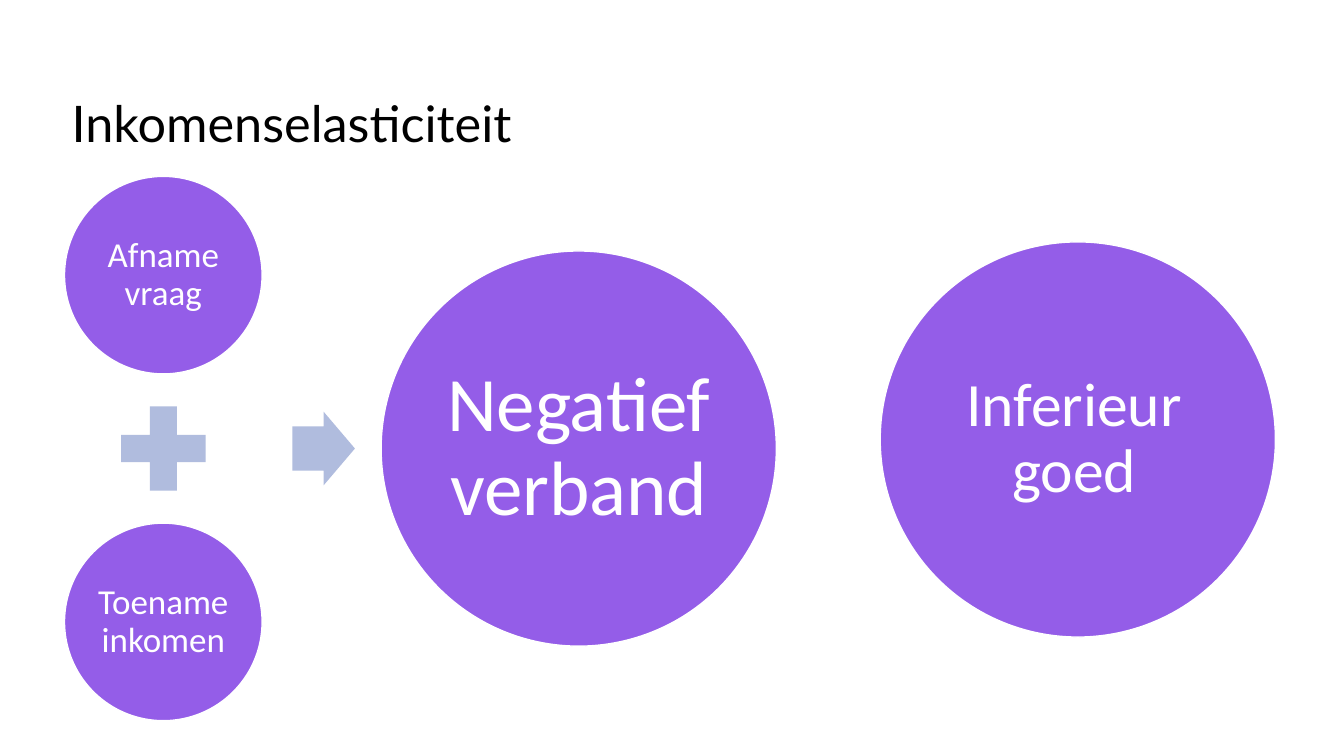
from dataclasses import dataclass

from pptx import Presentation
from pptx.dml.color import RGBColor
from pptx.enum.shapes import MSO_SHAPE as Shape
from pptx.enum.text import MSO_ANCHOR as Anchor, MSO_AUTO_SIZE as AutoSize, PP_ALIGN as Align
from pptx.util import Inches, Pt


@dataclass(frozen=True)
class Theme:
    purple: RGBColor = RGBColor(0x94, 0x5D, 0xE8)
    pale_blue: RGBColor = RGBColor(0xB0, 0xBC, 0xDE)
    white: RGBColor = RGBColor(0xFF, 0xFF, 0xFF)
    black: RGBColor = RGBColor(0, 0, 0)
    title_font: str = "Lato"
    body_font: str = "Calibri"
    title_size: int = 36
    small_size: int = 25
    goods_size: int = 44
    relation_size: int = 55


@dataclass(frozen=True)
class Circle:
    text: str
    x: float
    y: float
    diameter: float
    size: int
    inset: float
    extra_right: float = 0


@dataclass(frozen=True)
class Operator:
    kind: Shape
    x: float
    width: float
    height: float
    adjustments: tuple[float, ...] = ()


THEME = Theme()
MIDDLE = 4.45
COLUMN = 1.62
STEP = 1.72
SMALL, LARGE = 1.96, 3.92

CIRCLES = (
    Circle("Afname vraag", COLUMN, MIDDLE - STEP, SMALL, THEME.small_size, 0.03),
    Circle("Toename inkomen", COLUMN, MIDDLE + STEP, SMALL, THEME.small_size, 0.03),
    Circle("Negatief verband", 5.74, MIDDLE, LARGE, THEME.relation_size, 0.05),
    Circle("Inferieur goed", 10.69, 4.36, LARGE, THEME.goods_size, 0.08, 0.07),
)
OPERATORS = (
    Operator(Shape.MATH_PLUS, COLUMN, 1.14, 1.14),
    Operator(Shape.RIGHT_ARROW, 3.21, 0.62, 0.73, (0.6, 0.5)),
)


def add_centred(slide, kind: Shape, x: float, y: float, width: float, height: float, fill: RGBColor):
    sp = slide.shapes.add_shape(
        kind, Inches(x - width / 2), Inches(y - height / 2), Inches(width), Inches(height)
    )
    sp.shadow.inherit = False
    sp.fill.solid()
    sp.fill.fore_color.rgb = fill
    return sp


def draw_circle(slide, circle: Circle) -> None:
    sp = add_centred(
        slide, Shape.OVAL, circle.x, circle.y, circle.diameter, circle.diameter, THEME.purple
    )
    sp.line.color.rgb = THEME.white
    sp.line.width = Pt(1)
    tf = sp.text_frame
    tf.word_wrap = True
    tf.vertical_anchor = Anchor.MIDDLE
    tf.margin_left = tf.margin_top = tf.margin_bottom = Inches(circle.inset)
    tf.margin_right = Inches(circle.inset + circle.extra_right)
    p = tf.paragraphs[0]
    p.text = circle.text
    p.alignment = Align.CENTER
    p.line_spacing = 0.9
    p.font.name = THEME.body_font
    p.font.size = Pt(circle.size)
    p.font.color.rgb = THEME.white


def draw_operator(slide, operator: Operator) -> None:
    sp = add_centred(
        slide, operator.kind, operator.x, MIDDLE, operator.width, operator.height, THEME.pale_blue
    )
    sp.line.fill.background()
    for i, value in enumerate(operator.adjustments):
        sp.adjustments[i] = value


def draw_title(slide, text: str) -> None:
    title = slide.shapes.title
    title.left, title.top = Inches(0.61), Inches(0.86)
    title.width, title.height = Inches(10.55), Inches(1.31)
    tf = title.text_frame
    tf.word_wrap = True
    tf.auto_size = AutoSize.NONE
    tf.vertical_anchor = Anchor.TOP
    p = tf.paragraphs[0]
    p.text = text
    p.alignment = Align.LEFT
    p.font.name = THEME.title_font
    p.font.size = Pt(THEME.title_size)
    p.font.color.rgb = THEME.black


def main() -> None:
    prs = Presentation()
    prs.slide_width, prs.slide_height = Inches(13.33), Inches(7.5)
    slide = prs.slides.add_slide(prs.slide_layouts[5])
    draw_title(slide, "Inkomenselasticiteit")
    for circle in CIRCLES:
        draw_circle(slide, circle)
    for operator in OPERATORS:
        draw_operator(slide, operator)
    prs.save("out.pptx")


if __name__ == "__main__":
    main()
